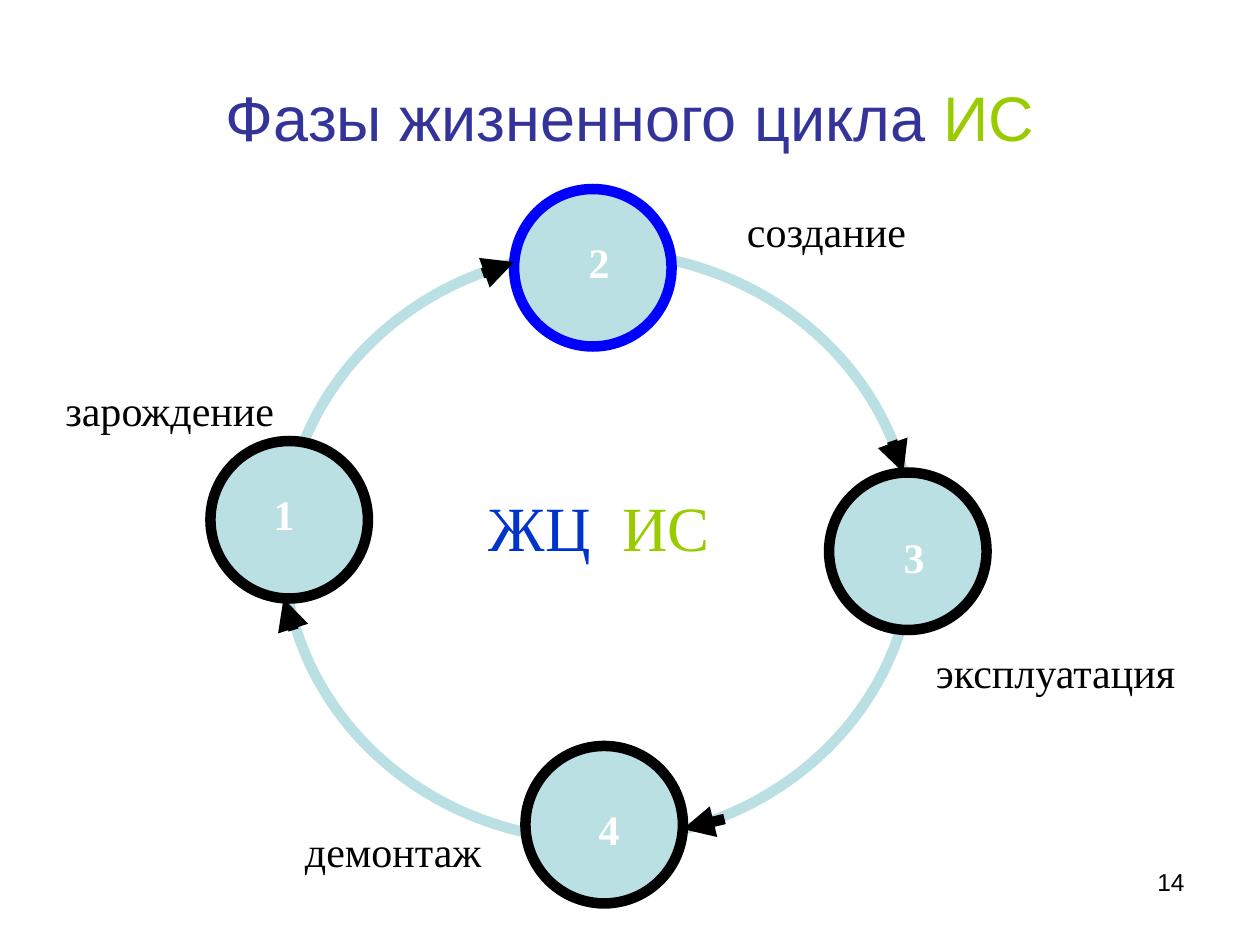
from dataclasses import dataclass
from typing import Any

from lxml import etree
from pptx import Presentation
from pptx import util as u
from pptx.dml.color import RGBColor
from pptx.enum import shapes, text
from pptx.oxml import ns

CENTER, LEFT, RIGHT = text.PP_ALIGN.CENTER, text.PP_ALIGN.LEFT, text.PP_ALIGN.RIGHT
BLACK, WHITE, BLUE, GREEN = "000000", "FFFFFF", "0000FF", "99CC00"
NODE_SIZE = 1.25


def color(hex_value):
    return RGBColor.from_string(hex_value)


@dataclass
class CycleSlide:
    slide: Any
    serif: str = "Times New Roman"
    sans: str = "Arial"
    ring_color: str = "BBE0E3"
    stroke: float = 6

    def outline(self, line, hex_value):
        line.color.rgb = color(hex_value)
        line.width = u.Pt(self.stroke)

    def ellipse(self, left, top, width, height, line, fill=None):
        oval = self.slide.shapes.add_shape(
            shapes.MSO_SHAPE.OVAL, *map(u.Inches, (left, top, width, height)))
        oval.shadow.inherit = False
        if fill:
            oval.fill.solid()
            oval.fill.fore_color.rgb = color(fill)
        else:
            oval.fill.background()
        self.outline(oval.line, line)

    def node(self, left, top, line):
        self.ellipse(left, top, NODE_SIZE, NODE_SIZE, line, self.ring_color)

    def arrow(self, start, end):
        arrow = self.slide.shapes.add_connector(
            shapes.MSO_CONNECTOR.STRAIGHT, *map(u.Inches, start + end))
        self.outline(arrow.line, BLACK)
        etree.SubElement(arrow.line._get_or_add_ln(), ns.qn("a:tailEnd"), type="triangle")
        etree.SubElement(arrow._element.spPr, ns.qn("a:effectLst"))

    def label(self, left, top, width, height, parts, size=24, align=LEFT,
              font=None, bold=False, anchor=text.MSO_ANCHOR.TOP):
        """Add one line of text; parts are (wording, colour) pairs."""
        box = self.slide.shapes.add_textbox(*map(u.Inches, (left, top, width, height)))
        frame = box.text_frame
        frame.word_wrap = True
        frame.vertical_anchor = anchor
        paragraph = frame.paragraphs[0]
        paragraph.alignment = align
        paragraph.font.name = font or self.serif
        paragraph.font.size = u.Pt(size)
        paragraph.font.bold = bold
        for wording, hex_value in parts:
            run = paragraph.add_run()
            run.text = wording
            run.font.color.rgb = color(hex_value)


def main():
    deck = Presentation()
    deck.slide_width, deck.slide_height = u.Inches(10), u.Inches(7.5)
    cycle = CycleSlide(deck.slides.add_slide(deck.slide_layouts[6]))

    cycle.label(7.17, 6.83, 2.33, 0.52, [("14", BLACK)], 14, RIGHT, cycle.sans)
    cycle.label(0.5, 0.3, 9, 1.25, [("Фазы жизненного цикла ", "333399"), ("ИС", GREEN)],
                36, CENTER, cycle.sans, anchor=text.MSO_ANCHOR.MIDDLE)

    cycle.ellipse(2.25, 2, 5, 4.67, cycle.ring_color)
    phases = [  # node corner, outline, number corner
        ((1.67, 3.5), BLACK, (1.92, 3.83)),
        ((4.08, 1.5), BLUE, (4.42, 1.83)),
        ((6.58, 3.75), BLACK, (6.92, 4.17)),
        ((4.17, 5.92), BLACK, (4.5, 6.33)),
    ]
    for number, (node, line, corner) in enumerate(phases, 1):
        cycle.node(*node, line)
        cycle.label(*corner, 0.67, 0.5, [(str(number), WHITE)], align=CENTER, bold=True)

    for start, end in [
        ((3.83, 2.17), (4.08, 2.08)),
        ((7.08, 3.5), (7.17, 3.75)),
        ((5.75, 6.5), (5.42, 6.58)),
        ((2.33, 5), (2.25, 4.75)),
    ]:
        cycle.arrow(start, end)

    for name, left, top, width, align in [
        ("зарождение", 0.42, 3, 1.92, LEFT),
        ("создание", 5.83, 1.58, 1.5, LEFT),
        ("эксплуатация", 7.33, 5.08, 2.17, LEFT),
        ("демонтаж", 2.25, 6.5, 1.67, RIGHT),
    ]:
        cycle.label(left, top, width, 0.5, [(name, BLACK)], align=align)
    cycle.label(3.67, 3.83, 2.17, 0.7, [("ЖЦ  ", "0033CC"), ("ИС", GREEN)], 36, CENTER)

    deck.save("out.pptx")


if __name__ == "__main__":
    main()
